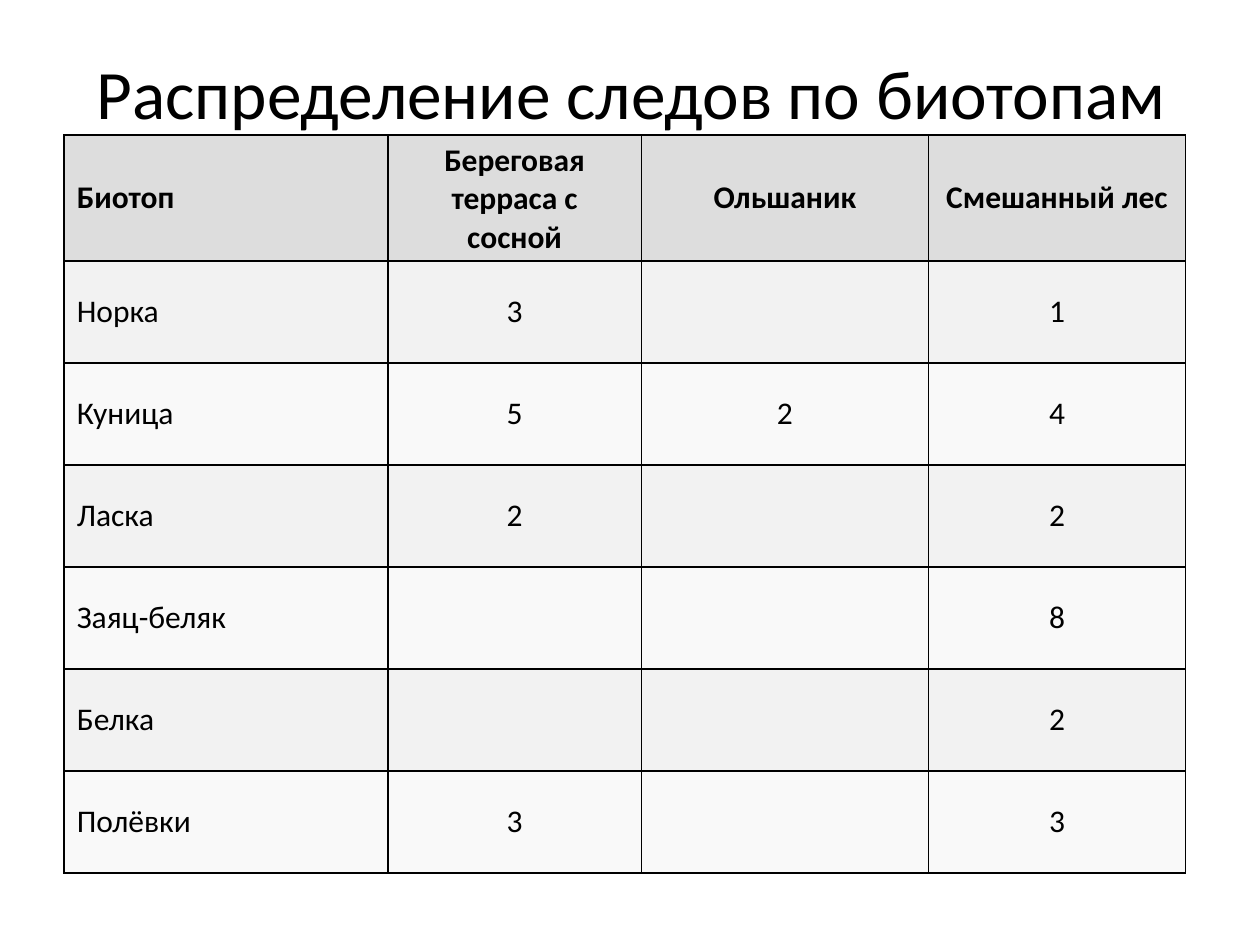
from dataclasses import dataclass

from lxml.etree import SubElement
from pptx import Presentation
from pptx.dml.color import RGBColor
from pptx.enum.text import MSO_ANCHOR, PP_ALIGN
from pptx.oxml.ns import qn
from pptx.util import Inches, Pt


@dataclass(frozen=True)
class Theme:
    font: str = "Calibri"
    ink: str = "000000"
    header_fill: str = "DDDDDD"
    row_fills: tuple = ("F2F2F2", "F9F9F9")
    title_size: float = 39.6
    table_size: float = 18
    border_width: float = 1


@dataclass(frozen=True)
class Box:
    left: float
    top: float
    width: float
    height: float

    def lengths(self):
        return [grid(value) for value in (self.left, self.top, self.width, self.height)]


THEME = Theme()
GRID_COLUMNS = 100
GRID_ROWS = 75
GRID_STEP = Inches(0.1)
TITLE_BOX = Box(5.1, 2.9, 90, 8.7)
TABLE_BOX = Box(5.1, 10.7, 89, 56.7)
COLUMN_WIDTHS = (25.7, 20.1, 22.8, 20.4)
TITLE = "Распределение следов по биотопам"
TRACKS = (
    ("Биотоп", "Береговая терраса с сосной", "Ольшаник", "Смешанный лес"),
    ("Норка", "3", "", "1"),
    ("Куница", "5", "2", "4"),
    ("Ласка", "2", "", "2"),
    ("Заяц-беляк", "", "", "8"),
    ("Белка", "", "", "2"),
    ("Полёвки", "3", "", "3"),
)


def grid(units):
    return round(units * GRID_STEP)


def write_text(text_frame, text, *, size, bold=False, align=PP_ALIGN.CENTER):
    paragraph = text_frame.paragraphs[0]
    paragraph.text = text
    paragraph.alignment = align
    font = paragraph.font
    font.name = THEME.font
    font.size = Pt(size)
    font.bold = bold
    font.color.rgb = RGBColor.from_string(THEME.ink)


def add_title(slide, box):
    shape = slide.shapes.add_textbox(*box.lengths())
    shape.text_frame.word_wrap = True
    shape.text_frame.vertical_anchor = MSO_ANCHOR.MIDDLE
    write_text(shape.text_frame, TITLE, size=THEME.title_size)


def add_borders(cell):
    properties = cell._tc.get_or_add_tcPr()
    for position, side in enumerate(("lnL", "lnR", "lnT", "lnB")):
        line = SubElement(properties, qn(f"a:{side}"), w=str(Pt(THEME.border_width)))
        fill = SubElement(line, qn("a:solidFill"))
        SubElement(fill, qn("a:srgbClr"), val=THEME.ink)
        properties.insert(position, line)


def format_cell(cell, text, row_index, column_index):
    is_header = row_index == 0
    fill = THEME.header_fill if is_header else THEME.row_fills[(row_index - 1) % 2]
    align = PP_ALIGN.LEFT if column_index == 0 else PP_ALIGN.CENTER
    cell.fill.solid()
    cell.fill.fore_color.rgb = RGBColor.from_string(fill)
    cell.vertical_anchor = MSO_ANCHOR.MIDDLE
    write_text(cell.text_frame, text, size=THEME.table_size, bold=is_header, align=align)
    add_borders(cell)


def add_track_table(slide, box):
    shape = slide.shapes.add_table(len(TRACKS), len(COLUMN_WIDTHS), *box.lengths())
    table = shape.table
    for column, width in zip(table.columns, COLUMN_WIDTHS):
        column.width = grid(width)
    for row_index, values in enumerate(TRACKS):
        table.rows[row_index].height = grid(box.height / len(TRACKS))
        for column_index, text in enumerate(values):
            format_cell(table.cell(row_index, column_index), text, row_index, column_index)


def main():
    presentation = Presentation()
    presentation.slide_width = grid(GRID_COLUMNS)
    presentation.slide_height = grid(GRID_ROWS)
    slide = presentation.slides.add_slide(presentation.slide_layouts[6])
    add_title(slide, TITLE_BOX)
    add_track_table(slide, TABLE_BOX)
    presentation.save("out.pptx")


if __name__ == "__main__":
    main()
